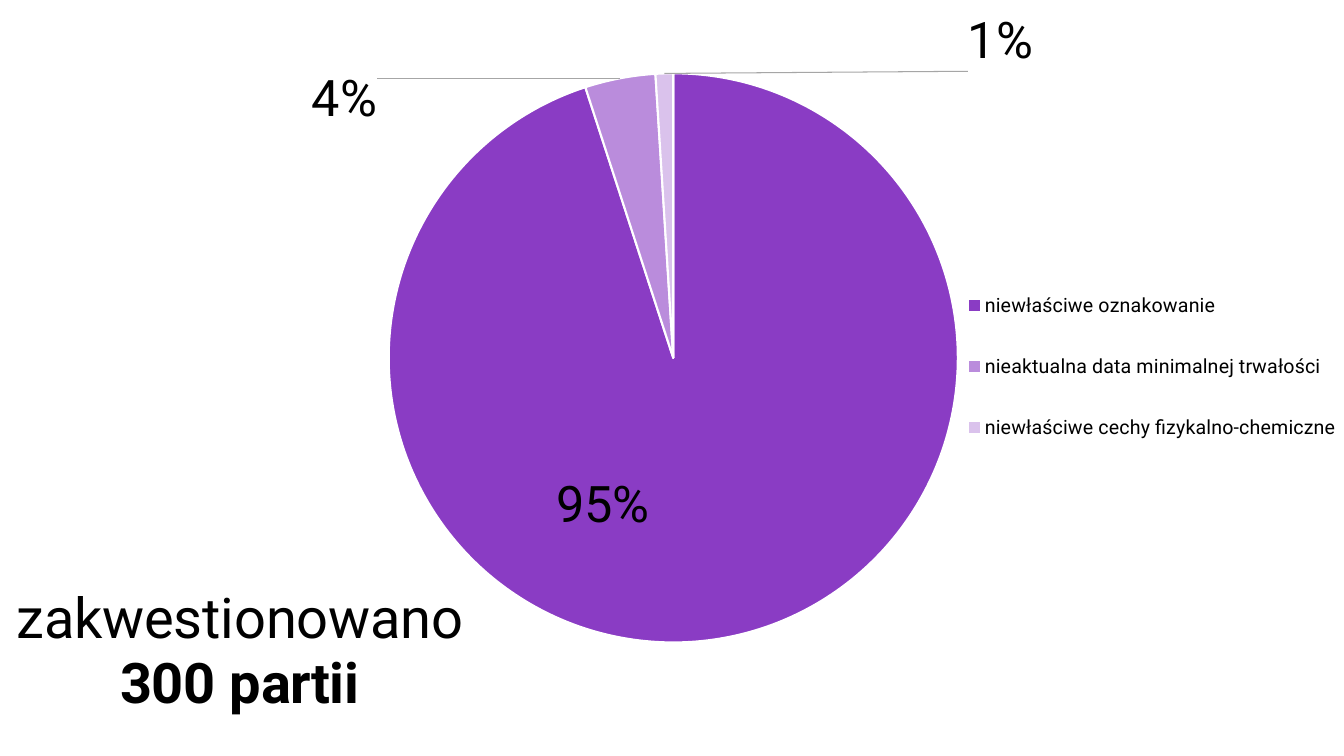
import pptx
import pptx.util
import pptx.chart.data
import pptx.dml.color
import pptx.enum.chart
import pptx.enum.text
import pptx.oxml
import pptx.oxml.ns

Cm = pptx.util.Cm
Pt = pptx.util.Pt
rgb = pptx.dml.color.RGBColor.from_string
kinds = pptx.enum.chart

theme = {
    "font": "Roboto",
    "text": "000000",
    "edge": "FFFFFF",
    "lead": "A6A6A6",
    "parts": ["8A3CC4", "BA8CDC", "DAC2EC"],
    "title": 40,
    "label": 36,
    "legend": 14,
}


def style(font, size, bold=False):
    font.name = theme["font"]
    font.size = Pt(size)
    font.bold = bold
    font.color.rgb = rgb(theme["text"])


def layout(**vals):
    space = pptx.oxml.ns.nsdecls("c")
    body = "".join(f'<c:{key} val="{val}"/>' for key, val in vals.items())
    return pptx.oxml.parse_xml(
        f"<c:layout {space}><c:manualLayout>{body}</c:manualLayout></c:layout>"
    )


deck = pptx.Presentation()
deck.slide_width = Cm(33.87)
deck.slide_height = Cm(19.05)
slide = deck.slides.add_slide(deck.slide_layouts[6])

data = pptx.chart.data.CategoryChartData(number_format="0")
data.categories = [
    "niewłaściwe oznakowanie",
    "nieaktualna data minimalnej trwałości",
    "niewłaściwe cechy fizykalno-chemiczne",
]
data.add_series("Series 1", [95, 4, 1])
chart = slide.shapes.add_chart(
    kinds.XL_CHART_TYPE.PIE, 0, 0, deck.slide_width, deck.slide_height, data
).chart
style(chart.font, theme["legend"])

chart.has_title = True
frame = chart.chart_title.text_frame
frame.text = "zakwestionowano\n300 partii"
for line, bold in zip(frame.paragraphs, [False, True]):
    line.alignment = pptx.enum.text.PP_ALIGN.CENTER
    style(line.runs[0].font, theme["title"], bold)
title = chart.chart_title._element
for old in title.xpath("c:layout"):
    title.remove(old)
title.xpath("c:tx")[0].addnext(layout(xMode="edge", yMode="edge", x=0.01, y=0.77))
chart.chart_title.include_in_layout = True

chart.has_legend = True
legend = chart.legend
legend.position = kinds.XL_LEGEND_POSITION.BOTTOM
legend.include_in_layout = False
style(legend.font, theme["legend"])
for old in legend._element.xpath("c:layout"):
    legend._element.remove(old)
legend._element.xpath("c:legendPos")[0].addnext(
    layout(xMode="edge", yMode="edge", x=0.715, y=0.34, w=0.285, h=0.29)
)

area = chart._chartSpace.xpath("c:chart/c:plotArea")[0]
for old in area.xpath("c:layout"):
    area.remove(old)
area.insert(0, layout(
    layoutTarget="inner", xMode="edge", yMode="edge",
    x=0.289, y=0.097, w=0.424, h=0.753,
))

plot = chart.plots[0]
plot.vary_by_categories = True
series = plot.series[0]
labels = series.data_labels
labels.show_value = False
labels.show_percentage = True
labels.number_format = "0%"
labels.number_format_is_linked = False
labels.position = kinds.XL_LABEL_POSITION.INSIDE_END
style(labels.font, theme["label"])

shifts = [(-0.05, -0.13), (-0.23, -0.02), (0.25, -0.09)]
for num, (color, shift) in enumerate(zip(theme["parts"], shifts)):
    point = series.points[num]
    point.format.fill.solid()
    point.format.fill.fore_color.rgb = rgb(color)
    point.format.line.color.rgb = rgb(theme["edge"])
    point.format.line.width = Pt(1.5)
    style(point.data_label.font, theme["label"])
    point.data_label.position = kinds.XL_LABEL_POSITION.INSIDE_END
    label = labels._element.xpath(f"c:dLbl[c:idx/@val='{num}']")[0]
    label.xpath("c:idx")[0].addnext(layout(x=shift[0], y=shift[1]))
    label.xpath("c:showVal")[0].set("val", "0")
    label.xpath("c:showPercent")[0].set("val", "1")

for old in labels._element.xpath("c:showLeaderLines"):
    labels._element.remove(old)
space = pptx.oxml.ns.nsdecls("c", "a")
labels._element.append(pptx.oxml.parse_xml(f'<c:showLeaderLines {space} val="1"/>'))
labels._element.append(pptx.oxml.parse_xml(
    f'<c:leaderLines {space}><c:spPr><a:ln w="9525"><a:solidFill>'
    f'<a:srgbClr val="{theme["lead"]}"/></a:solidFill></a:ln></c:spPr></c:leaderLines>'
))

deck.save("out.pptx")
